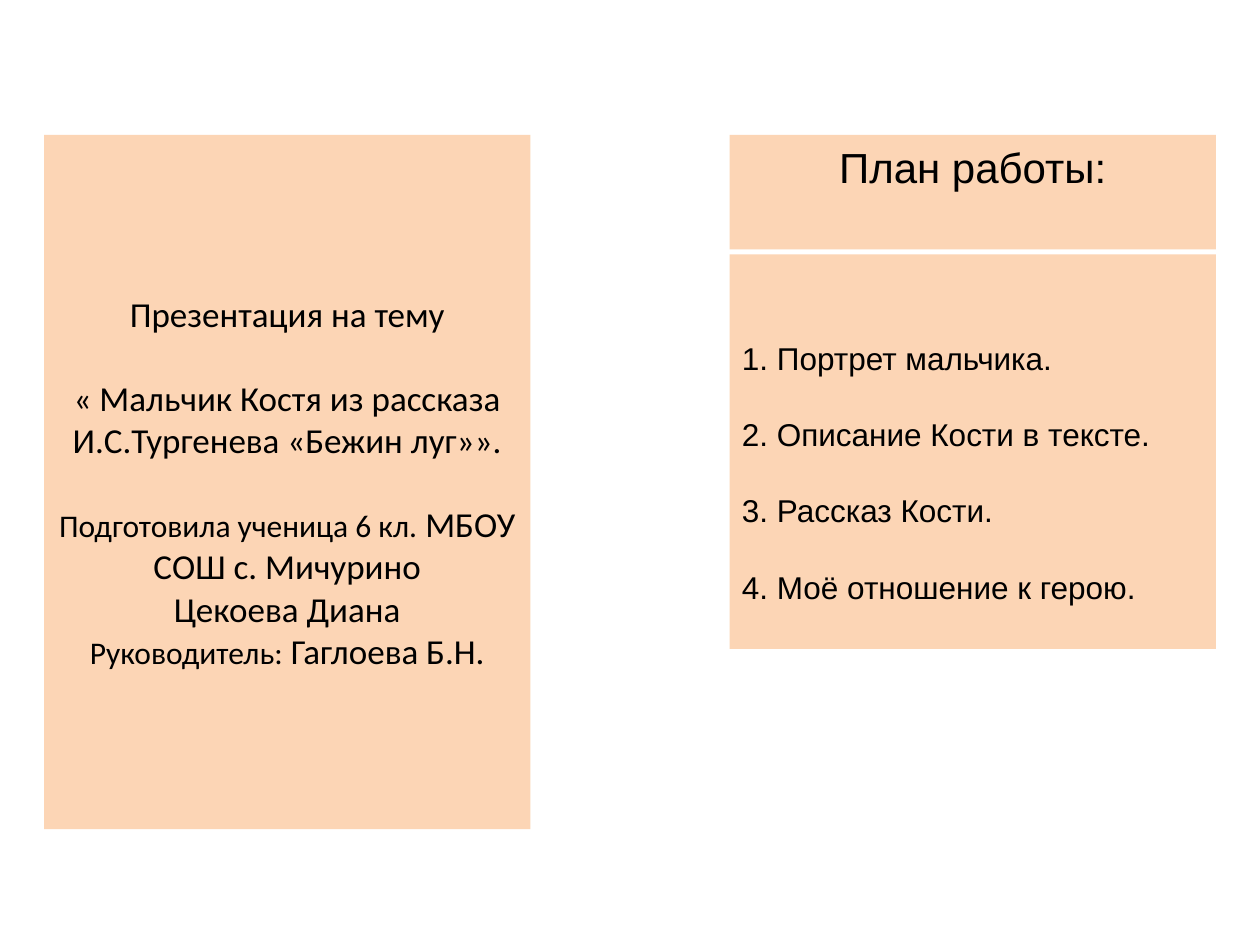
from dataclasses import dataclass

from pptx import Presentation
from pptx.dml.color import RGBColor
from pptx.enum.shapes import MSO_SHAPE
from pptx.enum.text import MSO_ANCHOR, PP_ALIGN
from pptx.util import Inches, Pt

RECT = MSO_SHAPE.RECTANGLE
TOP, MIDDLE = MSO_ANCHOR.TOP, MSO_ANCHOR.MIDDLE
LEFT, CENTER = PP_ALIGN.LEFT, PP_ALIGN.CENTER


@dataclass(frozen=True)
class Theme:
    panel: RGBColor = RGBColor(0xFC, 0xD5, 0xB5)
    ink: RGBColor = RGBColor(0, 0, 0)
    serif: str = "Calibri"
    sans: str = "Arial"
    small: int = 18
    body: int = 20
    head: int = 24


THEME = Theme()


def add_panel(slide, left, top, width, height, anchor=TOP, inset=0.05):
    panel = slide.shapes.add_shape(
        RECT, Inches(left), Inches(top), Inches(width), Inches(height))
    panel.shadow.inherit = False
    panel.fill.solid()
    panel.fill.fore_color.rgb = THEME.panel
    panel.line.fill.background()
    frame = panel.text_frame
    frame.word_wrap = True
    frame.vertical_anchor = anchor
    frame.margin_top = Inches(inset)
    return frame


def add_lines(frame, lines, font, align):
    for index, (gap, runs) in enumerate(lines):
        line = frame.add_paragraph() if index else frame.paragraphs[0]
        line.alignment = align
        line.space_before = Pt(gap)
        for text, size in runs:
            run = line.add_run()
            run.text = text
            run.font.name = font
            run.font.size = Pt(size)
            run.font.color.rgb = THEME.ink


def main():
    deck = Presentation()
    deck.slide_width, deck.slide_height = Inches(10), Inches(7.5)
    slide = deck.slides.add_slide(deck.slide_layouts[6])
    small, body = THEME.small, THEME.body
    width, top, right = 3.86, 1.07, 5.79

    cover = add_panel(slide, 0.35, top, width, 5.51, MIDDLE)
    add_lines(cover, [
        (0, [("Презентация на тему", body)]),
        (24, [("« Мальчик Костя из рассказа И.С.Тургенева «Бежин луг»».", body)]),
        (24, [("Подготовила ученица 6 кл.", small),
              (" МБОУ СОШ с. Мичурино", body)]),
        (0, [("Цекоева Диана", body)]),
        (0, [("Руководитель:", small), (" Гаглоева Б.Н.", body)]),
    ], THEME.serif, CENTER)

    plan = add_panel(slide, right, 2.02, width, 3.13, inset=0.67)
    steps = ["Портрет мальчика.", "Описание Кости в тексте.",
             "Рассказ Кости.", "Моё отношение к герою."]
    add_lines(plan, [
        (22 if index > 1 else 0, [(f"{index}. {step}", small)])
        for index, step in enumerate(steps, 1)
    ], THEME.sans, LEFT)

    title = add_panel(slide, right, top, width, 0.91)
    add_lines(title, [(0, [("План работы:", THEME.head)])], THEME.sans, CENTER)

    deck.save("out.pptx")


if __name__ == "__main__":
    main()
